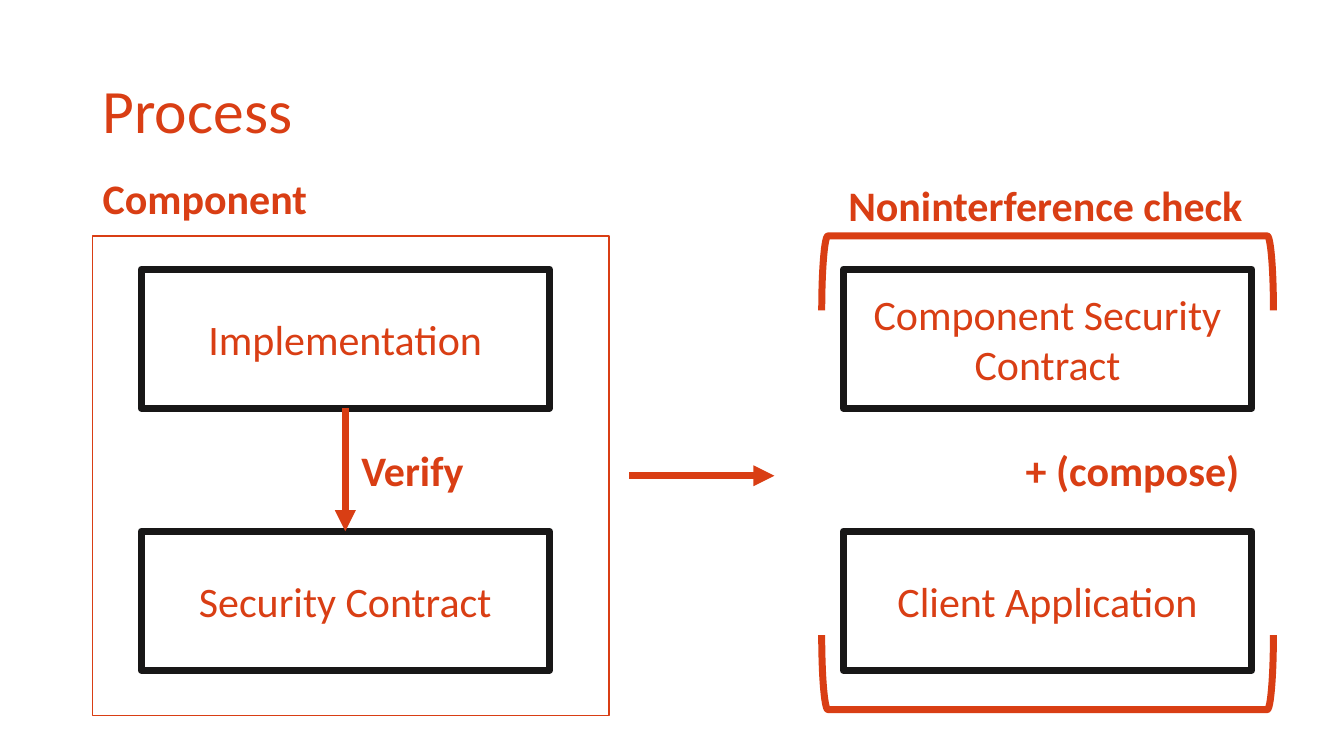
from lxml.etree import SubElement
from pptx import Presentation
from pptx.dml.color import RGBColor
from pptx.enum.shapes import MSO_CONNECTOR as Connector, MSO_SHAPE as Shape
from pptx.enum.text import MSO_ANCHOR as Anchor, MSO_AUTO_SIZE as AutoSize, PP_ALIGN as Align
from pptx.oxml.ns import qn
from pptx.util import Inches, Pt

COLORS = {"accent": "D93E14", "border": "181717"}
FONT = "Calibri"
BOX_W, BOX_H = 4.05, 1.38
BOX_STEP = 2.6
LABEL_H = 0.61
THICK = 5


def color(name):
    return RGBColor.from_string(COLORS[name])


def write(frame, text, size=30, bold=False, align=Align.LEFT, anchor=Anchor.TOP,
          wrap=True, spacing=None):
    frame.word_wrap = wrap
    frame.vertical_anchor = anchor
    paragraph = frame.paragraphs[0]
    paragraph.alignment = align
    paragraph.line_spacing = spacing
    run = paragraph.add_run()
    run.text = text
    run.font.name = FONT
    run.font.size = Pt(size)
    run.font.bold = bold
    run.font.color.rgb = color("accent")


def add_text(slide, text, left, top, width, height, **style):
    box = slide.shapes.add_textbox(Inches(left), Inches(top), Inches(width), Inches(height))
    write(box.text_frame, text, **style)
    return box


def add_label(slide, text, left, top, width):
    label = add_text(slide, text, left, top, width, LABEL_H, bold=True, wrap=False)
    label.text_frame.auto_size = AutoSize.SHAPE_TO_FIT_TEXT


def add_outline(slide, kind, left, top, width, height, line="accent", weight=THICK):
    outline = slide.shapes.add_shape(
        kind, Inches(left), Inches(top), Inches(width), Inches(height))
    outline.shadow.inherit = False
    outline.fill.background()
    outline.line.color.rgb = color(line)
    outline.line.width = Pt(weight)
    return outline


def add_box(slide, text, left, top):
    box = add_outline(slide, Shape.RECTANGLE, left, top, BOX_W, BOX_H, line="border")
    write(box.text_frame, text, align=Align.CENTER, anchor=Anchor.MIDDLE)
    return box


def add_arrow(slide, x1, y1, x2, y2):
    arrow = slide.shapes.add_connector(
        Connector.STRAIGHT, Inches(x1), Inches(y1), Inches(x2), Inches(y2))
    arrow.line.color.rgb = color("accent")
    arrow.line.width = Pt(THICK)
    SubElement(arrow.line._get_or_add_ln(), qn("a:tailEnd"), type="triangle")
    SubElement(arrow._element.spPr, qn("a:effectLst"))
    return arrow


def add_component(slide, left, top, width, height):
    """Framed implementation that is verified against its contract."""
    add_outline(slide, Shape.RECTANGLE, left, top, width, height, weight=1)
    add_label(slide, "Component", left, top - 0.68, 2.25)
    box_left, box_top = left + 0.48, top + 0.33
    implementation = add_box(slide, "Implementation", box_left, box_top)
    contract = add_box(slide, "Security Contract", box_left, box_top + BOX_STEP)
    middle = box_left + BOX_W / 2
    verify = add_arrow(slide, middle, box_top + BOX_H, middle, box_top + BOX_STEP)
    verify.begin_connect(implementation, 2)
    verify.end_connect(contract, 0)
    add_label(slide, "Verify", middle + 0.06, top + 2.02, 1.23)


def add_check(slide, left, top, width, height):
    """Bracketed contract and client that are composed."""
    box_left, box_top = left + (width - BOX_W) / 2, top + 0.33
    add_box(slide, "Component Security Contract", box_left, box_top)
    add_box(slide, "Client Application", box_left, box_top + BOX_STEP)
    add_label(slide, "+ (compose)", box_left + BOX_W - 2.34, top + 2.02, 2.34)
    depth = 0.74
    for angle, bracket_top in ((90, top), (270, top + height - depth)):
        bracket = add_outline(
            slide, Shape.LEFT_BRACKET, left + (width - depth) / 2,
            bracket_top + (depth - width) / 2, depth, width)
        bracket.rotation = angle
    add_label(slide, "Noninterference check", left + (width - 4.15) / 2, top - LABEL_H, 4.15)


def main():
    deck = Presentation()
    deck.slide_width, deck.slide_height = Inches(13.33), Inches(7.5)
    slide = deck.slides.add_slide(deck.slide_layouts[6])
    add_text(slide, "Process", 0.92, 0.4, 11.5, 1.45, size=44,
             anchor=Anchor.MIDDLE, spacing=0.9)
    add_component(slide, 0.92, 2.34, 5.12, 4.76)
    add_check(slide, 8.15, 2.34, 4.48, 4.7)
    add_arrow(slide, 6.24, 4.72, 7.68, 4.72)
    deck.save("out.pptx")


if __name__ == "__main__":
    main()
